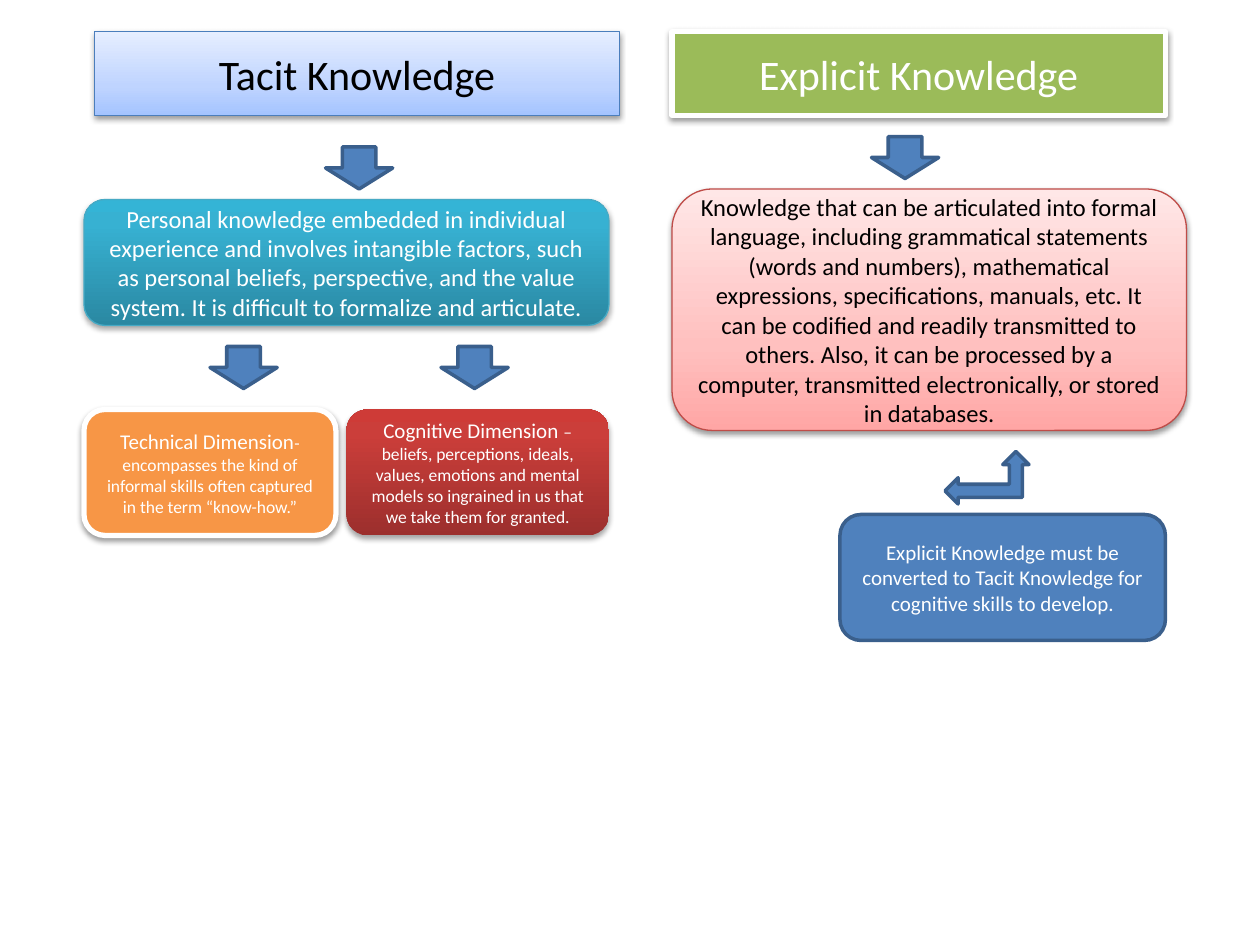
from lxml.etree import SubElement
from pptx import Presentation
from pptx.dml.color import RGBColor
from pptx.enum.shapes import MSO_SHAPE as Preset
from pptx.enum.text import MSO_ANCHOR as Anchor, MSO_AUTO_SIZE as AutoSize, PP_ALIGN as Align
from pptx.oxml.ns import qn
from pptx.util import Pt

PX = 914400 // 120
WIDTH, HEIGHT = 1200, 900
FONT = "Calibri"
WHITE, BLACK = "FFFFFF", "000000"

SUBTLE = (38, 20000)
INTENSE = (35, 23000)
STYLES = {
    "tacit": ([(0, "A4C4FF"), (35, "BFD4FF"), (100, "E6EEFF")], ("4B7EBC", 0.75), SUBTLE, BLACK),
    "personal": ([(0, "2A88A2"), (80, "37B1D2"), (100, "34B4D6")], ("46AAC5", 0.75), INTENSE, WHITE),
    "formal": ([(0, "FFA6A5"), (35, "FFC0BF"), (100, "FFE7E7")], ("BF4C48", 0.75), SUBTLE, BLACK),
    "cognitive": ([(0, "9C2F2D"), (80, "CB3E3A"), (100, "CE3B37")], None, INTENSE, WHITE),
    "explicit": ("9BBB59", (WHITE, 3), SUBTLE, WHITE),
    "technical": ("F79646", (WHITE, 3), SUBTLE, WHITE),
    "blue": ("4F81BD", ("3A5F8C", 2), None, WHITE),
}

TITLE = ("tacit", (90, 30, 500, 80), [("Tacit Knowledge", 24)])
BOXES = [
    (Preset.RECTANGLE, "explicit", (640, 30, 470, 80), [("Explicit Knowledge", 24)]),
    (Preset.ROUNDED_RECTANGLE, "personal", (80, 190, 500, 120), [
        ("Personal knowledge embedded in individual experience and involves intangible factors, "
         "such as personal beliefs, perspective, and the value system. It is difficult to "
         "formalize and articulate.", 14)]),
    (Preset.ROUNDED_RECTANGLE, "formal", (640, 180, 490, 230), [
        ("Knowledge that can be articulated into formal language, including grammatical "
         "statements (words and numbers), mathematical expressions, specifications, manuals, "
         "etc. It can be codified and readily transmitted to others. Also, it can be processed "
         "by a computer, transmitted electronically, or stored in databases.", 14)]),
    (Preset.ROUNDED_RECTANGLE, "technical", (80, 390, 240, 120), [
        ("Technical Dimension", 12),
        ("-encompasses the kind of informal skills often captured in the term “know-how.”", 10)]),
    (Preset.ROUNDED_RECTANGLE, "cognitive", (330, 390, 250, 120), [
        ("Cognitive Dimension ", 12),
        ("– beliefs, perceptions, ideals, values, emotions and mental models so ingrained in us "
         "that we take them for granted.", 10)]),
    (Preset.ROUNDED_RECTANGLE, "blue", (800, 490, 310, 120), [
        ("Explicit Knowledge must be converted to Tacit Knowledge for cognitive skills to "
         "develop.", 12)]),
    (Preset.LEFT_UP_ARROW, "blue", (900, 430, 80, 50), []),
]
DOWN_ARROW_SIZE = (64, 40)
DOWN_ARROWS = [(200, 330), (420, 330), (310, 140), (830, 130)]


def color(value):
    return RGBColor.from_string(value)


def set_fill(shape, fill):
    if isinstance(fill, str):
        shape.fill.solid()
        shape.fill.fore_color.rgb = color(fill)
        return
    shape.fill.gradient()
    shape.fill.gradient_angle = 90
    stops = shape.element.spPr.find(f".//{qn('a:gsLst')}")
    for stop in list(stops):
        stops.remove(stop)
    for position, value in fill:
        stop = SubElement(stops, qn("a:gs"), pos=str(position * 1000))
        SubElement(stop, qn("a:srgbClr"), val=value)


def set_shadow(shape, shadow):
    shape.shadow.inherit = False
    if shadow:
        opacity, distance = shadow
        effects = shape.element.spPr.find(qn("a:effectLst"))
        outer = SubElement(effects, qn("a:outerShdw"), blurRad="40000", dist=str(distance),
                           dir="5400000", rotWithShape="0")
        tint = SubElement(outer, qn("a:srgbClr"), val=BLACK)
        SubElement(tint, qn("a:alpha"), val=str(opacity * 1000))


def set_text(shape, runs, text_color):
    frame = shape.text_frame
    frame.word_wrap = True
    frame.auto_size = AutoSize.NONE
    frame.vertical_anchor = Anchor.MIDDLE
    paragraph = frame.paragraphs[0]
    paragraph.alignment = Align.CENTER
    paragraph.font.name = FONT
    paragraph.font.color.rgb = color(text_color)
    paragraph.font.size = Pt(runs[0][1])
    for text, size in runs:
        run = paragraph.add_run()
        run.text = text
        if size != runs[0][1]:
            run.font.size = Pt(size)


def format_shape(shape, style, runs):
    fill, line, shadow, text_color = STYLES[style]
    set_fill(shape, fill)
    if line:
        shape.line.color.rgb = color(line[0])
        shape.line.width = Pt(line[1])
    else:
        shape.line.fill.background()
    set_shadow(shape, shadow)
    if runs:
        set_text(shape, runs, text_color)


def main():
    presentation = Presentation()
    presentation.slide_width, presentation.slide_height = WIDTH * PX, HEIGHT * PX
    slide = presentation.slides.add_slide(presentation.slide_layouts[5])

    style, place, runs = TITLE
    title = slide.shapes.title
    title.left, title.top, title.width, title.height = (length * PX for length in place)
    format_shape(title, style, runs)

    arrows = [(Preset.DOWN_ARROW, "blue", corner + DOWN_ARROW_SIZE, []) for corner in DOWN_ARROWS]
    for preset, style, place, runs in BOXES + arrows:
        shape = slide.shapes.add_shape(preset, *(length * PX for length in place))
        format_shape(shape, style, runs)

    presentation.save("out.pptx")


if __name__ == "__main__":
    main()
